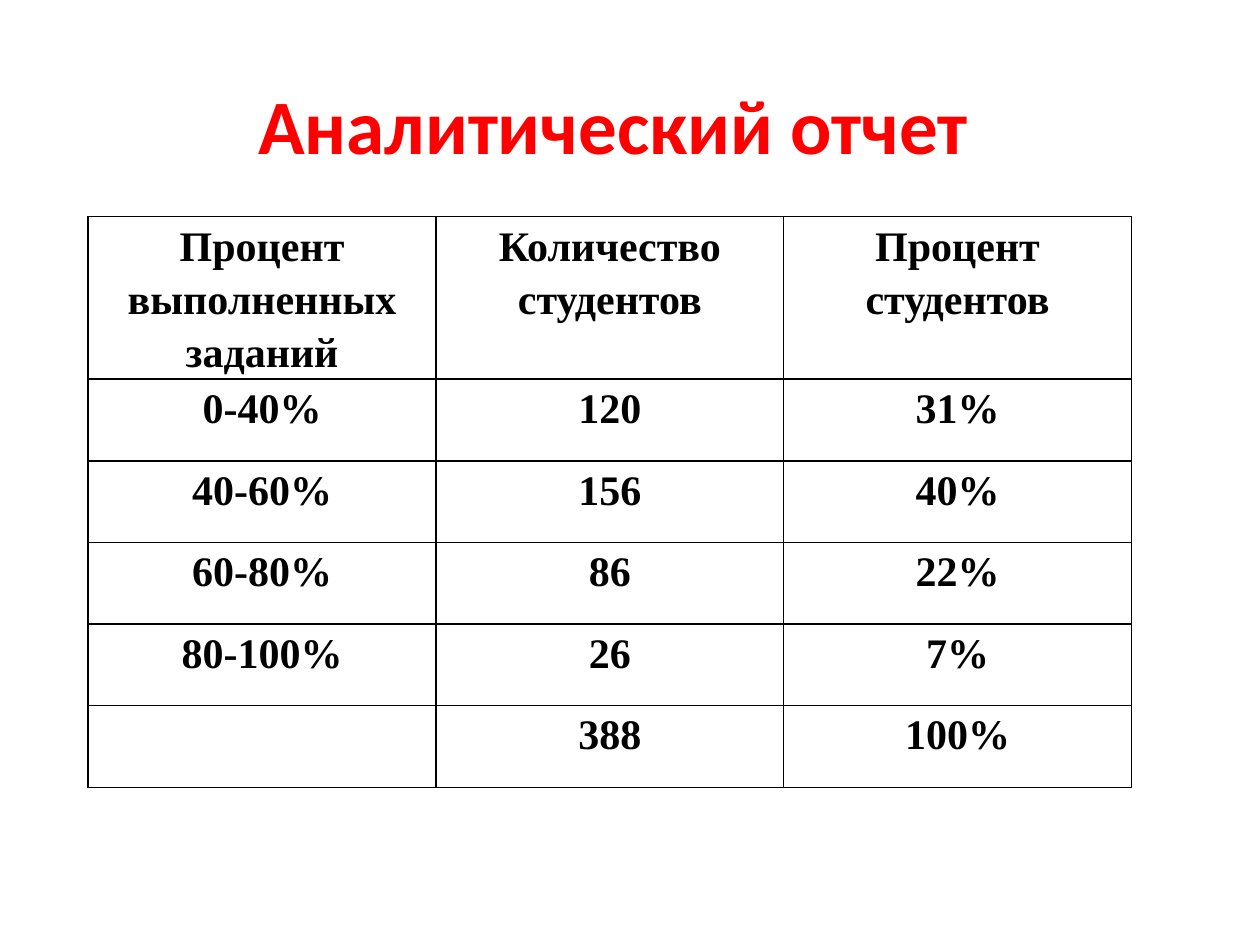
import pptx
import pptx.dml.color
import pptx.enum.text
import pptx.oxml
import pptx.util
from lxml import etree
from pptx.util import Inches

RED = pptx.dml.color.RGBColor(0xFF, 0x00, 0x00)
BLACK = pptx.dml.color.RGBColor(0x00, 0x00, 0x00)
DRAWING = "http://schemas.openxmlformats.org/drawingml/2006/main"
TITLE_ONLY = 5

REPORT = [
    ("Процент выполненных заданий", "Количество студентов", "Процент студентов"),
    ("0-40%", "120", "31%"),
    ("40-60%", "156", "40%"),
    ("60-80%", "86", "22%"),
    ("80-100%", "26", "7%"),
    ("", "388", "100%"),
]


def add_run(paragraph, text, font_name, size, color):
    run = paragraph.add_run()
    run.text = text
    run.font.name = font_name
    run.font.size = pptx.util.Pt(size)
    run.font.bold = True
    run.font.color.rgb = color


def place_title(slide, left, top, width, height):
    title = slide.shapes.title
    title.left, title.top = Inches(left), Inches(top)
    title.width, title.height = Inches(width), Inches(height)
    frame = title.text_frame
    frame.auto_size = pptx.enum.text.MSO_AUTO_SIZE.NONE
    frame.vertical_anchor = pptx.enum.text.MSO_ANCHOR.BOTTOM
    paragraph = frame.paragraphs[0]
    paragraph.alignment = pptx.enum.text.PP_ALIGN.LEFT
    add_run(paragraph, "Аналитический отчет", "Calibri", 44, RED)


def add_borders(cell):
    """Draw a thin black line on each side; borders must precede the fill."""
    properties = cell._tc.get_or_add_tcPr()
    for index, side in enumerate(("lnL", "lnR", "lnT", "lnB")):
        border = pptx.oxml.parse_xml(
            f'<a:{side} xmlns:a="{DRAWING}" w="{pptx.util.Pt(1)}"/>')
        fill = etree.SubElement(border, f"{{{DRAWING}}}solidFill")
        etree.SubElement(fill, f"{{{DRAWING}}}srgbClr", val=str(BLACK))
        properties.insert(index, border)


def fill_cell(cell, text):
    cell.margin_left = cell.margin_right = Inches(0.07)
    cell.margin_top = cell.margin_bottom = 0
    cell.fill.background()
    add_borders(cell)
    paragraph = cell.text_frame.paragraphs[0]
    paragraph.alignment = pptx.enum.text.PP_ALIGN.CENTER
    paragraph.line_spacing = 1.15
    if text:
        add_run(paragraph, text, "Times New Roman", 24, BLACK)


def place_report_table(slide, left, top, width, height, header_height):
    row_count, column_count = len(REPORT), len(REPORT[0])
    table = slide.shapes.add_table(
        row_count, column_count,
        Inches(left), Inches(top), Inches(width), Inches(height)).table
    table.first_row = table.horz_banding = False
    for column in table.columns:
        column.width = Inches(width / column_count)
    body_height = (height - header_height) / (row_count - 1)
    for index, row in enumerate(table.rows):
        row.height = Inches(body_height if index else header_height)
        for cell, text in zip(row.cells, REPORT[index]):
            fill_cell(cell, text)


def main():
    presentation = pptx.Presentation()
    presentation.slide_width = Inches(10)
    presentation.slide_height = Inches(7.5)
    slide = presentation.slides.add_slide(presentation.slide_layouts[TITLE_ONLY])
    place_title(slide, 1.95, 0.78, 6, 0.62)
    place_report_table(slide, 0.7, 1.72, 8.28, 4.53, header_height=1.29)
    presentation.save("out.pptx")


if __name__ == "__main__":
    main()
